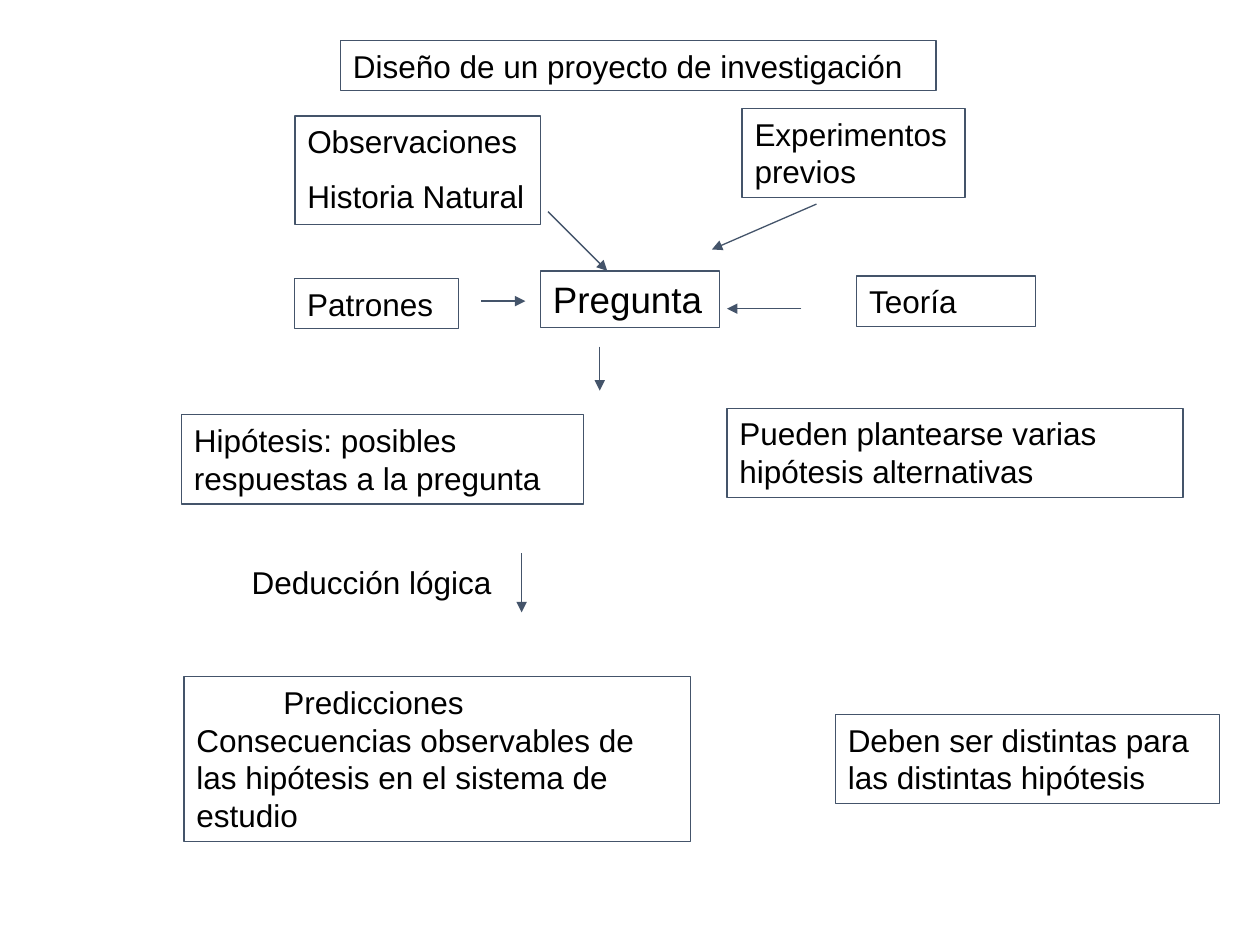
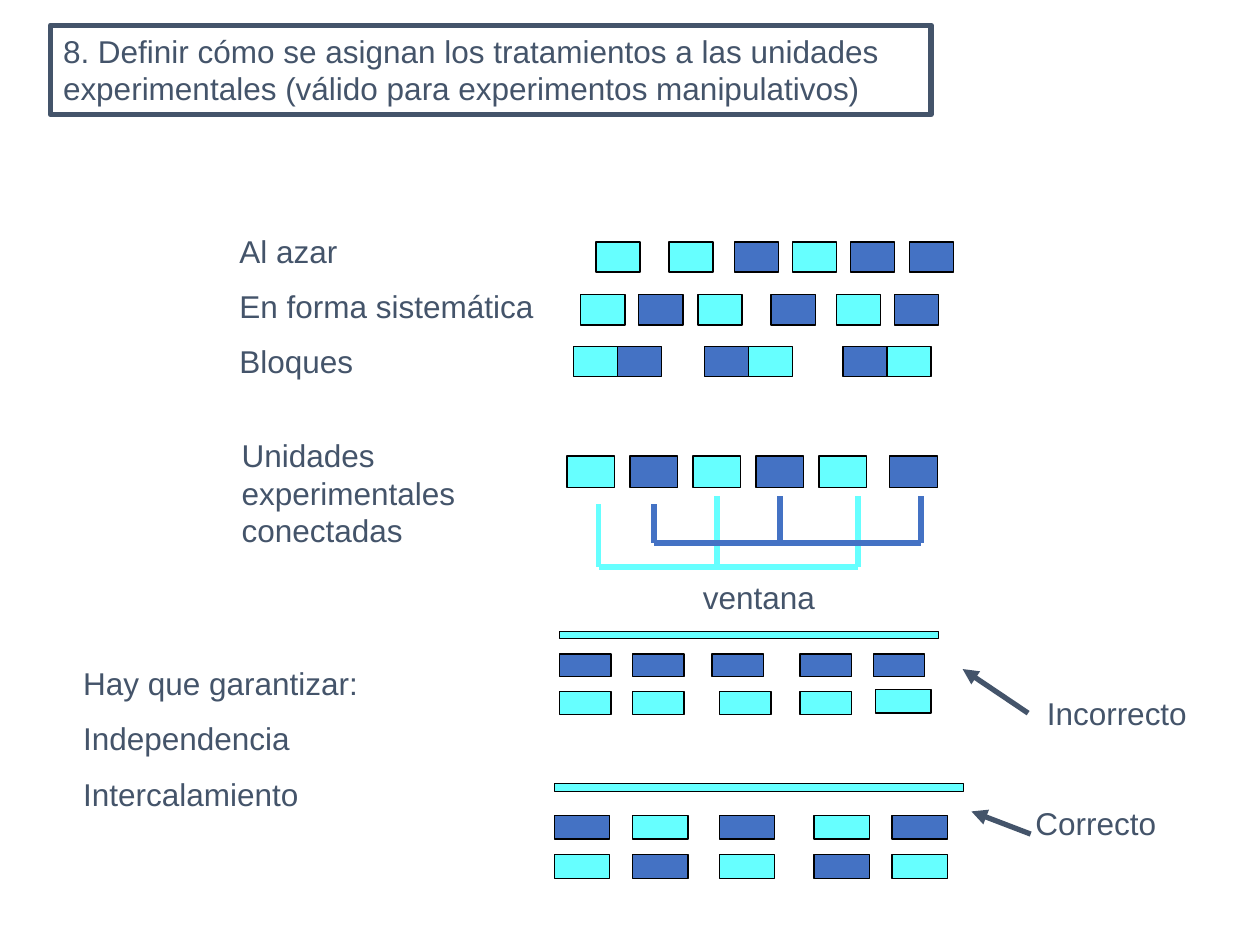
from typing import NamedTuple

from lxml.etree import SubElement
from pptx import Presentation
from pptx.dml.color import RGBColor
from pptx.enum.shapes import MSO_CONNECTOR as Connector, MSO_SHAPE as Shape
from pptx.enum.text import MSO_ANCHOR as Anchor, MSO_AUTO_SIZE as AutoSize, PP_ALIGN as Align
from pptx.oxml.ns import qn
from pptx.util import Inches, Pt

# Shared look
FONT = "Arial"
BLACK, SLATE, BLUE, CYAN = "000000", "44546A", "4472C4", "66FFFF"
TREATMENTS = {"C": CYAN, "B": BLUE}
THIN, THICK = 0.75, 3


class Label(NamedTuple):
    text: str
    left: float
    top: float
    width: float
    height: float = 0.4


class Arrow(NamedTuple):
    x1: float
    y1: float
    x2: float
    y2: float


class UnitRow(NamedTuple):
    pattern: str  # one treatment letter per experimental unit
    lefts: list[float]
    top: float
    width: float
    height: float


def colour(value: str) -> RGBColor:
    return RGBColor.from_string(value)


def place(box, left: float, top: float, width: float, height: float) -> None:
    box.left, box.top = Inches(left), Inches(top)
    box.width, box.height = Inches(width), Inches(height)


def write(box, text: str, *, size: float = 18, ink: str = SLATE,
          align=Align.LEFT, first_indent: float = 0) -> None:
    """Fill a box with one plain paragraph for each line of the text."""
    frame = box.text_frame
    frame.word_wrap = True
    frame.auto_size = AutoSize.NONE
    frame.vertical_anchor = Anchor.TOP
    frame.text = text
    for number, para in enumerate(frame.paragraphs):
        para.alignment = align
        para.space_before = Pt(10 if number else 0)
        properties = para._p.get_or_add_pPr()
        properties.set("marL", "0")
        properties.set("indent", str(Inches(first_indent)))
        SubElement(properties, qn("a:buNone"))
        for span in para.runs:
            span.font.name, span.font.size = FONT, Pt(size)
            span.font.color.rgb = colour(ink)


def outline(box, ink: str = SLATE, weight: float = THIN) -> None:
    box.line.color.rgb = colour(ink)
    box.line.width = Pt(weight)


def fill_placeholder(box, label: Label, **text_format) -> None:
    place(box, *label[1:])
    write(box, label.text, **text_format)


def add_label(page, label: Label, framed: bool = False, **text_format) -> None:
    box = page.shapes.add_textbox(*(Inches(length) for length in label[1:]))
    write(box, label.text, **text_format)
    if framed:
        outline(box)


def add_line(page, arrow: Arrow, ink: str = SLATE, weight: float = THIN,
             head: bool = True) -> None:
    line = page.shapes.add_connector(Connector.STRAIGHT, *(Inches(length) for length in arrow))
    outline(line, ink, weight)
    if head:
        SubElement(line.line._get_or_add_ln(), qn("a:tailEnd"), type="triangle")
    SubElement(line._element.spPr, qn("a:effectLst"))


def add_bar(page, left: float, top: float, width: float, height: float, fill: str) -> None:
    bar = page.shapes.add_shape(Shape.RECTANGLE, Inches(left), Inches(top),
                                Inches(width), Inches(height))
    bar.shadow.inherit = False
    bar.fill.solid()
    bar.fill.fore_color.rgb = colour(fill)
    outline(bar, BLACK)


def add_units(page, row: UnitRow) -> None:
    for letter, left in zip(row.pattern, row.lefts, strict=True):
        add_bar(page, left, row.top, row.width, row.height, TREATMENTS[letter])


def add_network(page, lefts: list[float], tops: list[float], base: float, ink: str) -> None:
    """Join units with a horizontal line and one riser for each unit."""
    add_line(page, Arrow(lefts[0], base, lefts[-1], base), ink, THICK, head=False)
    for left, top in zip(lefts, tops):
        add_line(page, Arrow(left, top, left, base), ink, THICK, head=False)


def build_design_page(deck) -> None:
    page = deck.slides.add_slide(deck.slide_layouts[5])
    title = page.shapes.title
    fill_placeholder(title, Label("Diseño de un proyecto de investigación", 2.7, 0.32, 4.73),
                     ink=BLACK)
    outline(title)

    # Sources of the question, hypotheses and predictions
    for label in (
        Label("Observaciones\nHistoria Natural", 2.34, 0.92, 1.95, 0.86),
        Label("Experimentos previos", 5.89, 0.86, 1.77, 0.71),
        Label("Patrones", 2.34, 2.21, 1.3),
        Label("Teoría", 6.8, 2.19, 1.42),
        Label("Hipótesis: posibles respuestas a la pregunta", 1.44, 3.29, 3.19, 0.71),
        Label("Pueden plantearse varias hipótesis alternativas", 5.77, 3.24, 3.62, 0.71),
        Label("Deben ser distintas para las distintas hipótesis", 6.63, 5.67, 3.05, 0.71),
    ):
        add_label(page, label, framed=True, ink=BLACK)
    add_label(page, Label("Pregunta", 4.29, 2.15, 1.42, 0.45), framed=True, size=21, ink=BLACK)
    add_label(page, Label("Predicciones Consecuencias observables de las hipótesis "
                          "en el sistema de estudio", 1.46, 5.37, 4.02, 1.31),
              framed=True, ink=BLACK, first_indent=0.69)
    add_label(page, Label("Deducción lógica", 1.77, 4.42, 2.36), ink=BLACK, align=Align.CENTER)

    # Flow
    for arrow in (
        Arrow(4.35, 1.68, 4.82, 2.15),
        Arrow(6.48, 1.62, 5.65, 1.98),
        Arrow(3.82, 2.39, 4.17, 2.39),
        Arrow(6.36, 2.45, 5.77, 2.45),
        Arrow(4.76, 2.75, 4.76, 3.1),
        Arrow(4.14, 4.39, 4.14, 4.86),
    ):
        add_line(page, arrow)


def build_treatments_page(deck) -> None:
    page = deck.slides.add_slide(deck.slide_layouts[3])
    title, methods, guarantees = page.placeholders
    fill_placeholder(title, Label("8. Definir cómo se asignan los tratamientos a las unidades "
                                  "experimentales (válido para experimentos manipulativos)",
                                  0.4, 0.2, 6.99, 0.71))
    outline(title, weight=THICK)
    fill_placeholder(methods, Label("Al azar\nEn forma sistemática\nBloques",
                                    1.8, 1.79, 2.75, 1.31))
    fill_placeholder(guarantees, Label("Hay que garantizar:\nIndependencia\nIntercalamiento",
                                       0.56, 5.22, 3.4, 1.31))
    for label in (
        Label("Unidades experimentales conectadas", 1.82, 3.41, 2.3, 1.01),
        Label("ventana", 5.48, 4.54, 1.12),
        Label("Incorrecto", 8.21, 5.46, 1.44),
        Label("Correcto", 8.12, 6.33, 1.44),
    ):
        add_label(page, label)

    # Windows
    add_bar(page, 4.44, 5.01, 3.01, 0.06, CYAN)
    add_bar(page, 4.4, 6.22, 3.25, 0.06, CYAN)

    # Experimental units
    block = 0.35
    block_lefts = [left + step for left in (4.55, 5.59, 6.69) for step in (0, block)]
    mixed_lefts = [4.4, 5.02, 5.71, 6.46, 7.08]
    for row in (
        UnitRow("CCBCBB", [4.73, 5.31, 5.83, 6.29, 6.75, 7.22], 1.92, block, 0.24),
        UnitRow("CBCBCB", [4.61, 5.07, 5.54, 6.12, 6.64, 7.1], 2.34, block, 0.24),
        UnitRow("CBBCBC", block_lefts, 2.75, block, 0.24),
        UnitRow("CBCBCB", [4.5, 5, 5.5, 6, 6.5, 7.06], 3.62, 0.38, 0.25),
        UnitRow("BBBBB", [4.44, 5.02, 5.65, 6.35, 6.93], 5.19, 0.41, 0.18),
        UnitRow("CCCC", [4.44, 5.02, 5.71, 6.35], 5.49, 0.41, 0.18),
        UnitRow("C", [6.95], 5.47, 0.44, 0.19),
        UnitRow("BCBCB", mixed_lefts, 6.47, 0.44, 0.19),
        UnitRow("CBCBC", mixed_lefts, 6.78, 0.44, 0.19),
    ):
        add_units(page, row)

    # Connections between units
    riser_tops = [4, 3.94, 3.94]
    add_network(page, [4.75, 5.69, 6.81], riser_tops, 4.5, CYAN)
    add_network(page, [5.19, 6.19, 7.31], riser_tops, 4.31, BLUE)

    # Verdict arrows
    for arrow in (Arrow(8.16, 5.66, 7.64, 5.31), Arrow(8.18, 6.62, 7.71, 6.44)):
        add_line(page, arrow, weight=THICK)


def main() -> None:
    deck = Presentation()
    deck.slide_width, deck.slide_height = Inches(10), Inches(7.5)
    build_design_page(deck)
    build_treatments_page(deck)
    deck.save("out.pptx")


if __name__ == "__main__":
    main()
